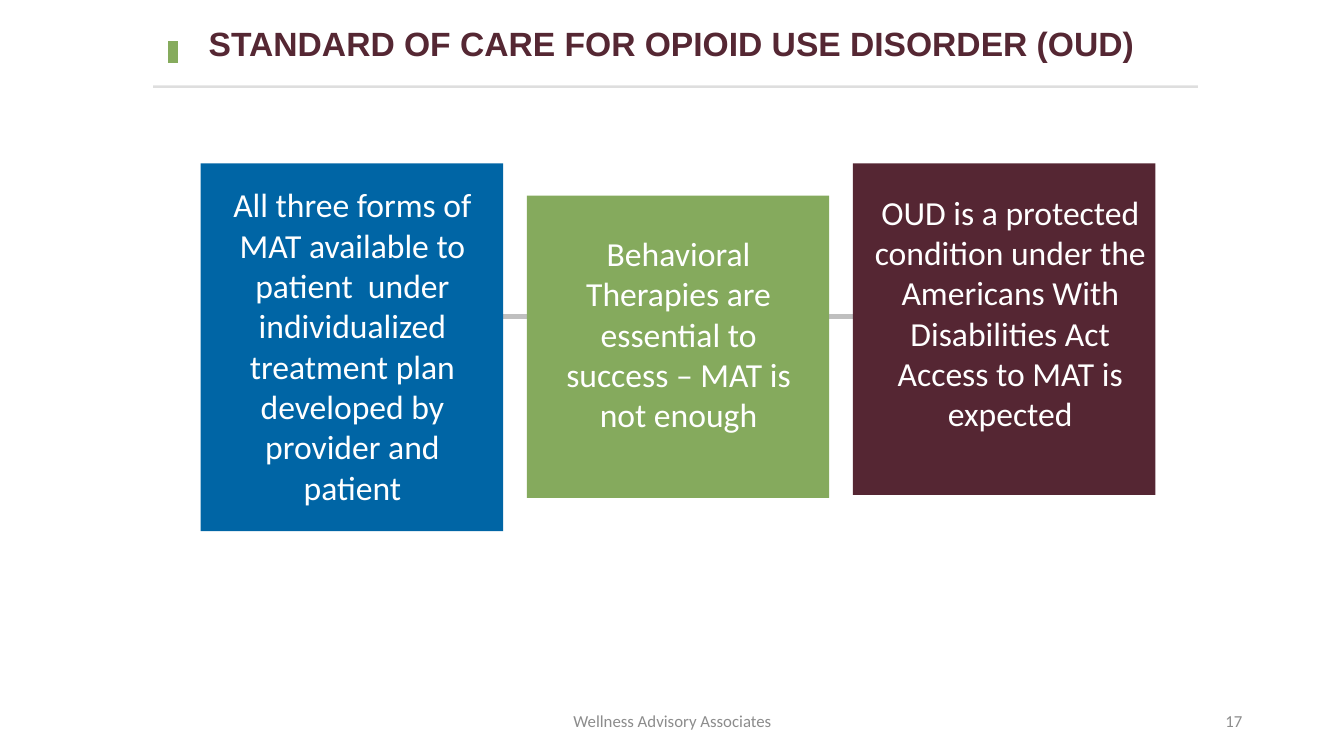
from lxml import etree
from pptx import Presentation
from pptx import util as u
from pptx.dml.color import RGBColor
from pptx.enum import shapes, text
from pptx.oxml import ns

COLORS = {
    "blue": "0065A5",
    "green": "85AA5D",
    "accent": "86AB5D",
    "plum": "552633",
    "title": "552733",
    "connector": "BFBFBF",
    "rule": "000000",
    "footer": "8C8C8C",
    "white": "FFFFFF",
}

CARD_SIZE = 3
CARD_LEFT = 1.99
CARD_STEP = 3.235
CARDS = [
    ("blue", 1.62, 3.65, (0.18, 1.78, 2.65, 3.33),
     ["All three forms of MAT available to patient  under individualized "
      "treatment plan developed by provider and patient"]),
    ("green", 1.94, 3, (0.18, 2.26, 2.65, 2.12),
     ["Behavioral Therapies are essential to success – MAT is not enough"]),
    ("plum", 1.62, 3.29, (0.06, 1.85, 3, 2.52),
     ["OUD is a protected condition under the Americans With Disabilities Act",
      "Access to MAT is expected"]),
]


class SlideBuilder:
    def __init__(self, slide, body_font="Calibri", title_font="Arial"):
        self.slide = slide
        self.body_font = body_font
        self.title_font = title_font

    def color(self, name):
        return RGBColor.from_string(COLORS[name])

    def format_text(self, frame, font, size, color, alignment, bold=False):
        frame.word_wrap = True
        for paragraph in frame.paragraphs:
            paragraph.alignment = alignment
            for run in paragraph.runs:
                run.font.name = font
                run.font.size = u.Pt(size)
                run.font.bold = bold
                run.font.color.rgb = self.color(color)

    def title(self, wording, left, top, width, height):
        title = self.slide.shapes.title
        title.left, title.top = u.Inches(left), u.Inches(top)
        title.width, title.height = u.Inches(width), u.Inches(height)
        frame = title.text_frame
        frame.text = wording
        frame.auto_size = text.MSO_AUTO_SIZE.NONE
        frame.vertical_anchor = text.MSO_ANCHOR.TOP
        self.format_text(frame, self.title_font, 24, "title", text.PP_ALIGN.LEFT, True)

    def line(self, start, end, color, width, opacity=None):
        points = [u.Inches(value) for value in (*start, *end)]
        connector = self.slide.shapes.add_connector(
            shapes.MSO_CONNECTOR.STRAIGHT, *points)
        connector.line.color.rgb = self.color(color)
        connector.line.width = u.Pt(width)
        properties = connector.element.spPr
        if opacity is not None:
            fill = properties.find(".//" + ns.qn("a:srgbClr"))
            etree.SubElement(fill, ns.qn("a:alpha"), val=str(opacity * 1000))
        etree.SubElement(properties, ns.qn("a:effectLst"))

    def rectangle(self, left, top, width, height, color):
        shape = self.slide.shapes.add_shape(
            shapes.MSO_SHAPE.RECTANGLE,
            u.Inches(left), u.Inches(top), u.Inches(width), u.Inches(height))
        shape.shadow.inherit = False
        shape.fill.solid()
        shape.fill.fore_color.rgb = self.color(color)
        shape.line.fill.background()

    def label(self, wording, left, top, width, height, size, color,
              alignment=text.PP_ALIGN.CENTER, anchor=text.MSO_ANCHOR.TOP):
        box = self.slide.shapes.add_textbox(
            u.Inches(left), u.Inches(top), u.Inches(width), u.Inches(height))
        frame = box.text_frame
        frame.text = wording
        frame.vertical_anchor = anchor
        self.format_text(frame, self.body_font, size, color, alignment)


def main():
    presentation = Presentation()
    presentation.slide_width = u.Inches(13.33)
    presentation.slide_height = u.Inches(7.5)
    slide = presentation.slides.add_slide(presentation.slide_layouts[5])
    builder = SlideBuilder(slide)

    builder.title("STANDARD OF CARE FOR OPIOID USE DISORDER (OUD)", 1.97, 0.18, 9.72, 0.5)
    builder.line((1.72, 0.41), (1.72, 0.63), "accent", 7)
    builder.line((1.52, 0.86), (11.88, 0.86), "rule", 1.75, opacity=12)

    builder.line((4.01, 3.14), (10.16, 3.14), "connector", 3)
    for index, (color, top, height, label_area, paragraphs) in enumerate(CARDS):
        left = CARD_LEFT + index * CARD_STEP
        inset, label_top, label_width, label_height = label_area
        builder.rectangle(left, top, CARD_SIZE, height, color)
        builder.label("\n".join(paragraphs), left + inset, label_top,
                      label_width, label_height, 24, "white")

    builder.label("Wellness Advisory Associates", 4.42, 6.95, 4.5, 0.4, 12, "footer",
                  anchor=text.MSO_ANCHOR.MIDDLE)
    builder.label("17", 9.42, 6.95, 3, 0.4, 12, "footer",
                  text.PP_ALIGN.RIGHT, text.MSO_ANCHOR.MIDDLE)

    presentation.save("out.pptx")


if __name__ == "__main__":
    main()
